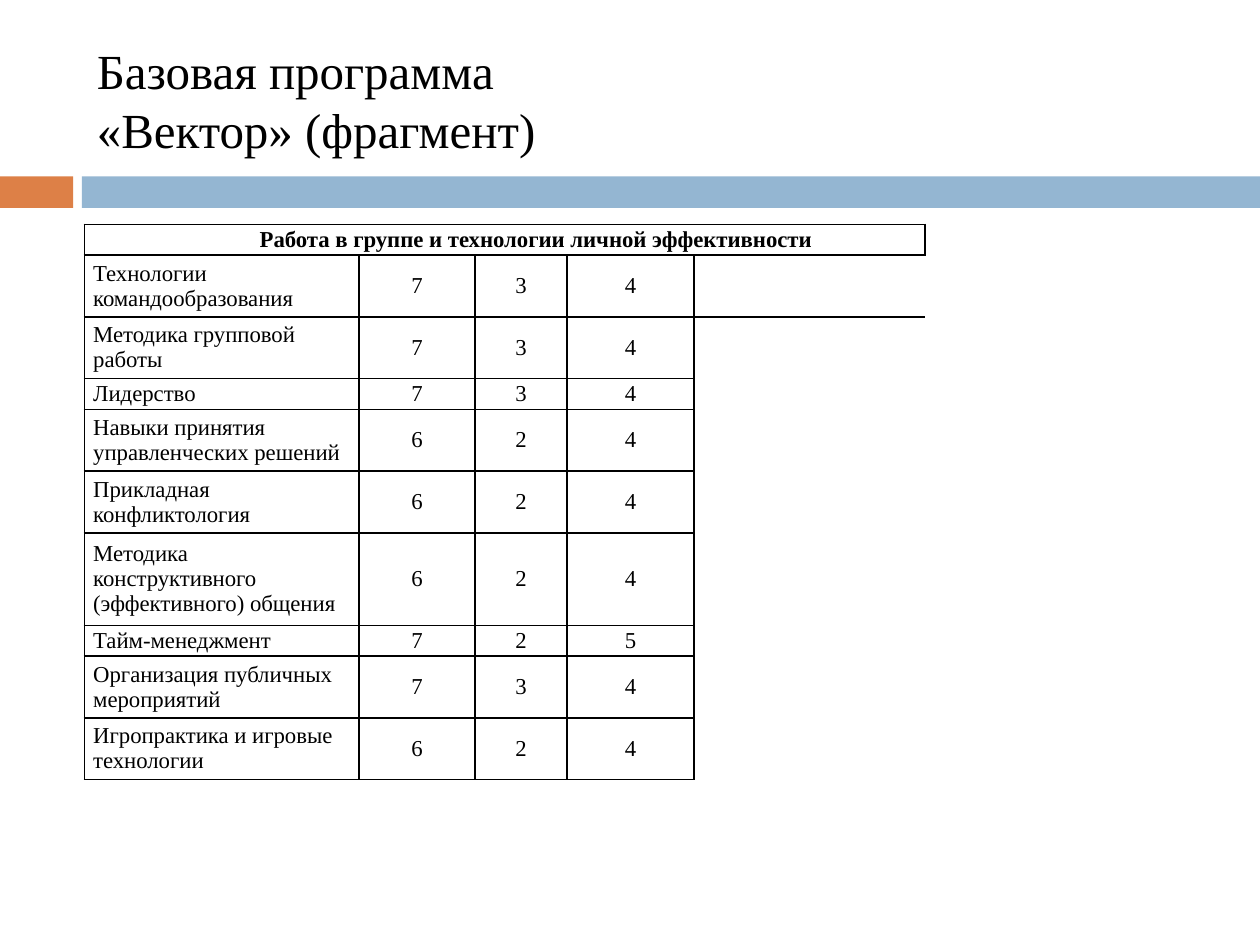
"""Build the slide with the group work section of the base programme."""
from dataclasses import dataclass
from typing import Any, NamedTuple

from lxml.etree import SubElement
from pptx import Presentation
from pptx.dml.color import RGBColor
from pptx.enum.shapes import MSO_SHAPE
from pptx.enum.text import MSO_ANCHOR, PP_ALIGN
from pptx.oxml.ns import qn
from pptx.util import Inches, Pt


@dataclass(frozen=True)
class Theme:
    font: str = "Times New Roman"
    title_size: int = 28
    table_size: int = 13
    border_width: int = 1
    black: str = "000000"
    white: str = "FFFFFF"
    orange: str = "DD8047"
    blue: str = "94B6D2"
    plain_table_style: str = "{2D5ABB26-0587-4C30-8999-92F81FD0307C}"


class Bar(NamedTuple):
    left: float
    width: float
    color: str


class Course(NamedTuple):
    name: str
    hours: tuple[int, int, int]
    lines: int


THEME = Theme()
BARS = [Bar(0, 0.58, THEME.orange), Bar(0.65, 9.35, THEME.blue)]
TITLE_LINES = ["Базовая программа", "«Вектор» (фрагмент)"]
SECTION = "Работа в группе и технологии личной эффективности"
COURSES = [
    Course("Технологии командообразования", (7, 3, 4), 2),
    Course("Методика групповой работы", (7, 3, 4), 2),
    Course("Лидерство", (7, 3, 4), 1),
    Course("Навыки принятия управленческих решений", (6, 2, 4), 2),
    Course("Прикладная конфликтология", (6, 2, 4), 2),
    Course("Методика конструктивного (эффективного) общения", (6, 2, 4), 3),
    Course("Тайм-менеджмент", (7, 2, 5), 1),
    Course("Организация публичных мероприятий", (7, 3, 4), 2),
    Course("Игропрактика и игровые технологии", (6, 2, 4), 2),
]
COLUMN_WIDTHS = [2.18, 0.92, 0.73, 1.01, 1.83]
TABLE_HEIGHT = 4.41
ALL_SIDES = "LRTB"
CELL_FORMAT = {
    "margin_left": Inches(0.07),
    "margin_right": Inches(0.07),
    "margin_top": 0,
    "margin_bottom": 0,
    "vertical_anchor": MSO_ANCHOR.MIDDLE,
}
TITLE_FORMAT = {"word_wrap": True, "vertical_anchor": MSO_ANCHOR.MIDDLE}


def apply_format(target: Any, values: dict[str, Any]) -> None:
    for name, value in values.items():
        setattr(target, name, value)


def add_span(para: Any, text: str, size: int, bold: bool = False) -> None:
    span = para.add_run()
    span.text = text
    apply_format(span.font, {"name": THEME.font, "size": Pt(size), "bold": bold})
    span.font.color.rgb = RGBColor.from_string(THEME.black)


def add_bar(page: Any, bar: Bar) -> None:
    shape = page.shapes.add_shape(
        MSO_SHAPE.RECTANGLE, Inches(bar.left), Inches(1.4), Inches(bar.width), Inches(0.25)
    )
    shape.shadow.inherit = False
    shape.fill.solid()
    shape.fill.fore_color.rgb = RGBColor.from_string(bar.color)
    shape.line.fill.background()


def add_title(page: Any) -> None:
    box = page.shapes.add_textbox(Inches(0.67), Inches(0.25), Inches(8.92), Inches(1.08))
    apply_format(box.text_frame, TITLE_FORMAT)
    para = box.text_frame.paragraphs[0]
    for index, line in enumerate(TITLE_LINES):
        if index:
            para.add_line_break()
        add_span(para, line, THEME.title_size)


def add_borders(cell: Any, sides: str) -> None:
    properties = cell._tc.get_or_add_tcPr()
    for side in sides:
        line = SubElement(properties, qn(f"a:ln{side}"), w=str(Pt(THEME.border_width)))
        fill = SubElement(line, qn("a:solidFill"))
        SubElement(fill, qn("a:srgbClr"), val=THEME.black)


def fill_cell(cell: Any, text: str, centered: bool = True, bold: bool = False) -> None:
    apply_format(cell, CELL_FORMAT)
    add_borders(cell, ALL_SIDES)
    cell.fill.solid()
    cell.fill.fore_color.rgb = RGBColor.from_string(THEME.white)
    para = cell.text_frame.paragraphs[0]
    para.alignment = PP_ALIGN.CENTER if centered else PP_ALIGN.LEFT
    add_span(para, text, THEME.table_size, bold)


def clear_cell(cell: Any, sides: str) -> None:
    apply_format(cell, CELL_FORMAT)
    add_borders(cell, sides)
    cell.fill.background()
    para = cell.text_frame.paragraphs[0]
    SubElement(para._p, qn("a:endParaRPr"), sz=str(THEME.table_size * 100))


def add_course_table(page: Any) -> None:
    frame = page.shapes.add_table(
        len(COURSES) + 1, len(COLUMN_WIDTHS),
        Inches(0.67), Inches(1.78), Inches(sum(COLUMN_WIDTHS)), Inches(TABLE_HEIGHT),
    )
    table = frame.table
    apply_format(table, {"first_row": False, "horz_banding": False})
    frame._element.find(f".//{qn('a:tableStyleId')}").text = THEME.plain_table_style
    for column, width in zip(table.columns, COLUMN_WIDTHS):
        column.width = Inches(width)
    line_counts = [1] + [course.lines for course in COURSES]
    for row, lines in zip(table.rows, line_counts):
        row.height = Inches(TABLE_HEIGHT * lines / sum(line_counts))

    header = table.cell(0, 0)
    header.merge(table.cell(0, len(COLUMN_WIDTHS) - 1))
    fill_cell(header, SECTION, bold=True)
    header_para = header.text_frame.paragraphs[0]
    header_para._p.get_or_add_pPr().set("indent", str(Inches(0.49)))
    for column in range(1, len(COLUMN_WIDTHS)):
        clear_cell(table.cell(0, column), ALL_SIDES)

    for row, course in enumerate(COURSES, start=1):
        fill_cell(table.cell(row, 0), course.name, centered=False)
        for column, hours in enumerate(course.hours, start=1):
            fill_cell(table.cell(row, column), str(hours))
        clear_cell(table.cell(row, len(COLUMN_WIDTHS) - 1), "LT" if row == 1 else "L")


def main() -> None:
    deck = Presentation()
    apply_format(deck, {"slide_width": Inches(10), "slide_height": Inches(7.5)})
    page = deck.slides.add_slide(deck.slide_layouts[6])
    for bar in BARS:
        add_bar(page, bar)
    add_title(page)
    add_course_table(page)
    deck.save("out.pptx")


if __name__ == "__main__":
    main()
